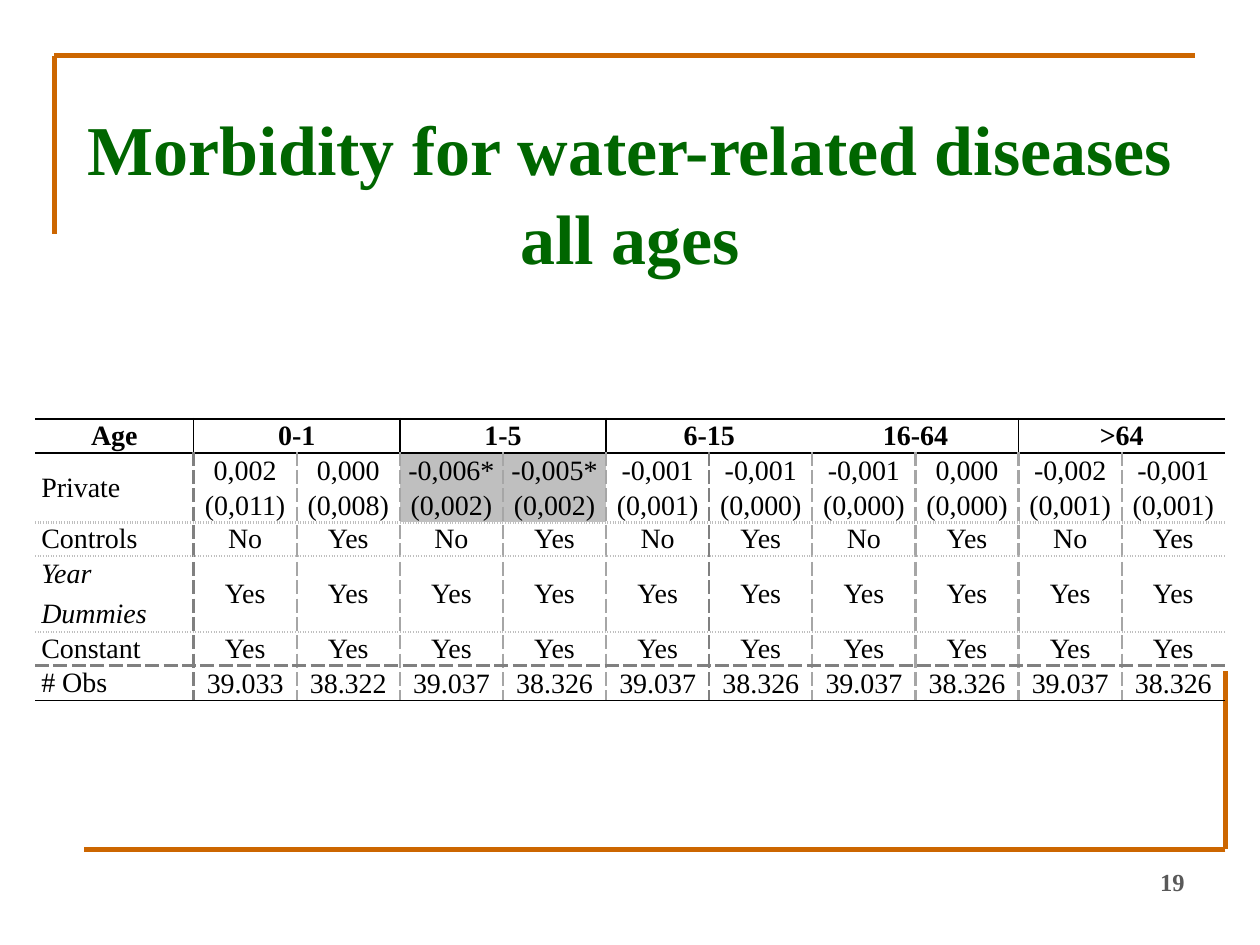
from lxml import etree
from pptx import Presentation
from pptx import util as u
from pptx.dml.color import RGBColor
from pptx.enum import shapes, text
from pptx.oxml.ns import qn

FONT = "Times New Roman"
BLACK = ("000000", 1.5, "solid")
THIN_BLACK = ("000000", 1, "solid")
DOTTED = ("BFBFBF", 1.5, "sysDot")
DASHED = ("A6A6A6", 1.5, "sysDash")
DARK_DASHED = ("808080", 1.5, "sysDash")

ROW_RULES = [BLACK, BLACK, None, DOTTED, DOTTED, DOTTED, DARK_DASHED, THIN_BLACK]
HEADER_RULES = {1: THIN_BLACK, 3: BLACK, 5: BLACK, 7: THIN_BLACK, 9: THIN_BLACK}
BODY_RULES = {edge: DARK_DASHED if edge in (1, 6) else DASHED for edge in range(1, 11)}
BODY_RULES[10] = DASHED

AGES = ["0-1", "1-5", "6-15", "16-64", ">64"]
ROWS = [
    ["Age"] + [label for age in AGES for label in (age, "")],
    ["Private", "0,002", "0,000", "-0,006*", "-0,005*", "-0,001",
     "-0,001", "-0,001", "0,000", "-0,002", "-0,001"],
    ["", "(0,011)", "(0,008)", "(0,002)", "(0,002)", "(0,001)",
     "(0,000)", "(0,000)", "(0,000)", "(0,001)", "(0,001)"],
    ["Controls"] + ["No", "Yes"] * 5,
    ["Year\nDummies"] + ["Yes"] * 10,
    ["Constant"] + ["Yes"] * 10,
    ["# Obs", "39.033", "38.322"] + ["39.037", "38.326"] * 4,
]
COLUMN_COUNT = len(ROWS[0])
VALUE_ROWS = (1, 2, 6)
HIGHLIGHTED = [(row, column) for row in (1, 2) for column in (3, 4)]


def color(value):
    """Return the colour for a hex string."""
    return RGBColor.from_string(value)


def write(frame, content, size=16, fill="000000", bold=False, italic=False,
          align="LEFT", before=0, spacing=None):
    """Fill a text frame, one paragraph per line of content."""
    for index, line in enumerate(content.split("\n")):
        paragraph = frame.add_paragraph() if index else frame.paragraphs[0]
        paragraph.text = line
        paragraph.alignment = getattr(text.PP_ALIGN, align)
        paragraph.space_before = u.Pt(before)
        if spacing:
            paragraph.line_spacing = spacing
        for run in paragraph.runs:
            run.font.name = FONT
            run.font.size = u.Pt(size)
            run.font.bold = bold
            run.font.italic = italic
            run.font.color.rgb = color(fill)


def add_text(slide, box, content, anchor="TOP", **style):
    """Add a wrapping text box."""
    frame = slide.shapes.add_textbox(*map(u.Pt, box)).text_frame
    frame.word_wrap = True
    frame.vertical_anchor = getattr(text.MSO_ANCHOR, anchor)
    write(frame, content, **style)


def add_line(slide, *ends):
    """Add one orange frame line."""
    line = slide.shapes.add_connector(shapes.MSO_CONNECTOR.STRAIGHT, *map(u.Pt, ends))
    line.line.color.rgb = color("CC6600")
    line.line.width = u.Pt(3)
    etree.SubElement(line._element.spPr, qn("a:effectLst"))


def add_corner(slide, x, y, across, down):
    """Add a corner at x, y with a horizontal and a vertical arm."""
    add_line(slide, x, y, x + across, y)
    add_line(slide, x, y, x, y + down)


def set_borders(cell, **rules):
    """Set the cell borders, hiding those whose rule is None."""
    properties = cell._tc.get_or_add_tcPr()
    for side in "LRTB":
        line = etree.SubElement(properties, qn(f"a:ln{side}"))
        rule = rules[side]
        if rule is None:
            etree.SubElement(line, qn("a:noFill"))
            continue
        hex_color, width, dash = rule
        line.set("w", str(u.Pt(width)))
        fill = etree.SubElement(line, qn("a:solidFill"))
        etree.SubElement(fill, qn("a:srgbClr"), val=hex_color)
        etree.SubElement(line, qn("a:prstDash"), val=dash)


def format_cell(cell, row, column):
    """Set the text, borders and fill of one table cell."""
    is_header, is_label = row == 0, column == 0
    tight = row in VALUE_ROWS and not is_label
    cell.vertical_anchor = text.MSO_ANCHOR.MIDDLE
    cell.margin_left = cell.margin_right = u.Pt(0.7 if tight else 3.6)
    cell.margin_top = u.Pt(0.7 if tight else 0)
    cell.margin_bottom = u.Pt(0)
    write(cell.text_frame, ROWS[row][column], bold=is_header, italic=is_label and row == 4,
          align="LEFT" if is_label and not is_header else "CENTER",
          before=5 if is_header or is_label else 0)
    edges = HEADER_RULES if is_header else BODY_RULES
    set_borders(cell, L=edges.get(column),
                R=edges.get(column + 1) if column + 1 < COLUMN_COUNT else None,
                T=ROW_RULES[row], B=ROW_RULES[row + 1])
    if (row, column) in HIGHLIGHTED:
        cell.fill.solid()
        cell.fill.fore_color.rgb = color("BFBFBF")
    else:
        cell.fill.background()


def add_results(slide, left, top, width, height):
    """Add the table of estimates by age group."""
    label_width, year_row, year_height = 90.6, 4, 40.5
    table = slide.shapes.add_table(len(ROWS), COLUMN_COUNT,
                                   *map(u.Pt, (left, top, width, height))).table
    table.first_row = table.horz_banding = False
    for index, column in enumerate(table.columns):
        column.width = u.Pt((width - label_width) / (COLUMN_COUNT - 1) if index else label_width)
    for index, row in enumerate(table.rows):
        row.height = u.Pt(year_height if index == year_row
                          else (height - year_height) / (len(ROWS) - 1))
    for row in range(len(ROWS)):
        for column in range(COLUMN_COUNT):
            format_cell(table.cell(row, column), row, column)
    for column in range(1, COLUMN_COUNT, 2):
        table.cell(0, column).merge(table.cell(0, column + 1))
    table.cell(1, 0).merge(table.cell(2, 0))


def main():
    """Build and save the slide."""
    presentation = Presentation()
    presentation.slide_width, presentation.slide_height = u.Pt(720), u.Pt(540)
    slide = presentation.slides.add_slide(presentation.slide_layouts[6])
    add_corner(slide, 31, 31.8, 652, 102)
    add_corner(slide, 700.2, 485.3, -652, -102)
    add_text(slide, (516, 492, 168, 37.5), "19", size=14, fill="595959", bold=True,
             align="RIGHT")
    add_text(slide, (0, 49, 720, 119), "Morbidity for water-related diseases\vall ages",
             anchor="MIDDLE", size=40, fill="006600", bold=True, align="CENTER", spacing=1.05)
    add_results(slide, 20, 239.5, 680, 150)
    presentation.save("out.pptx")


if __name__ == "__main__":
    main()
